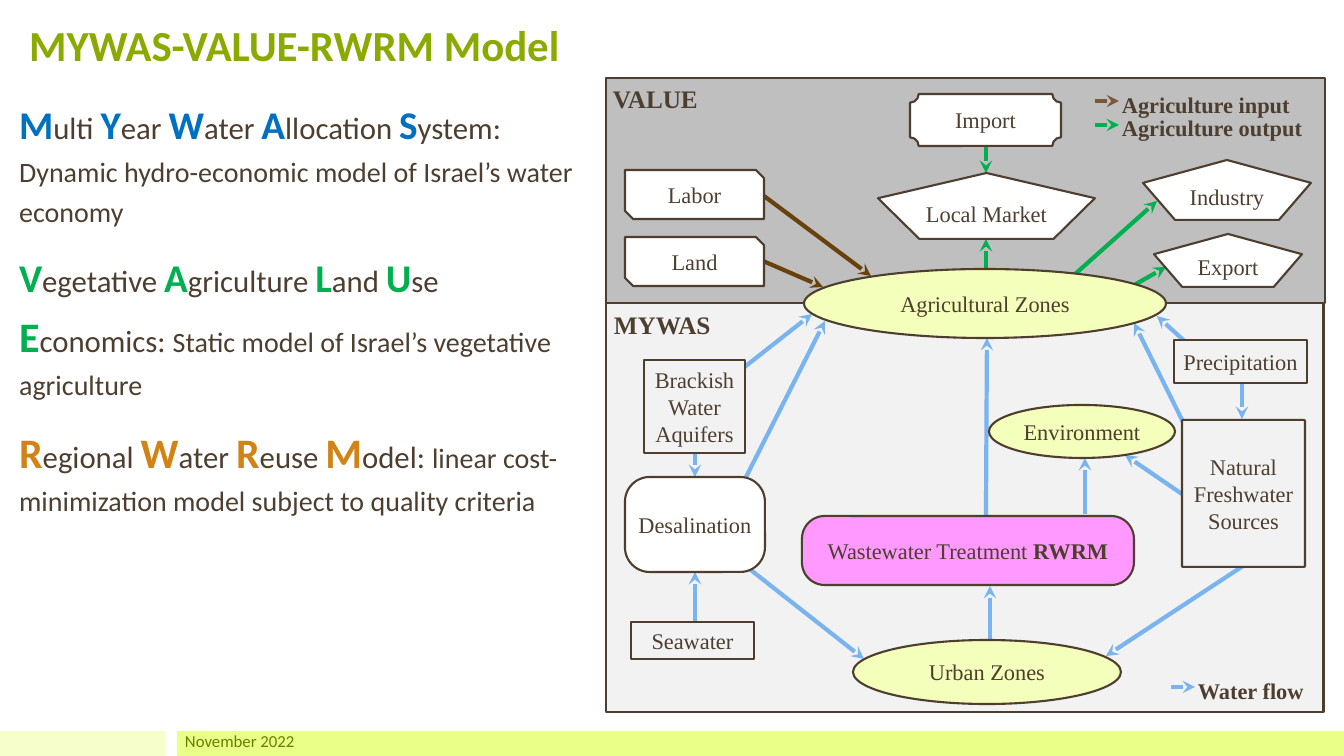
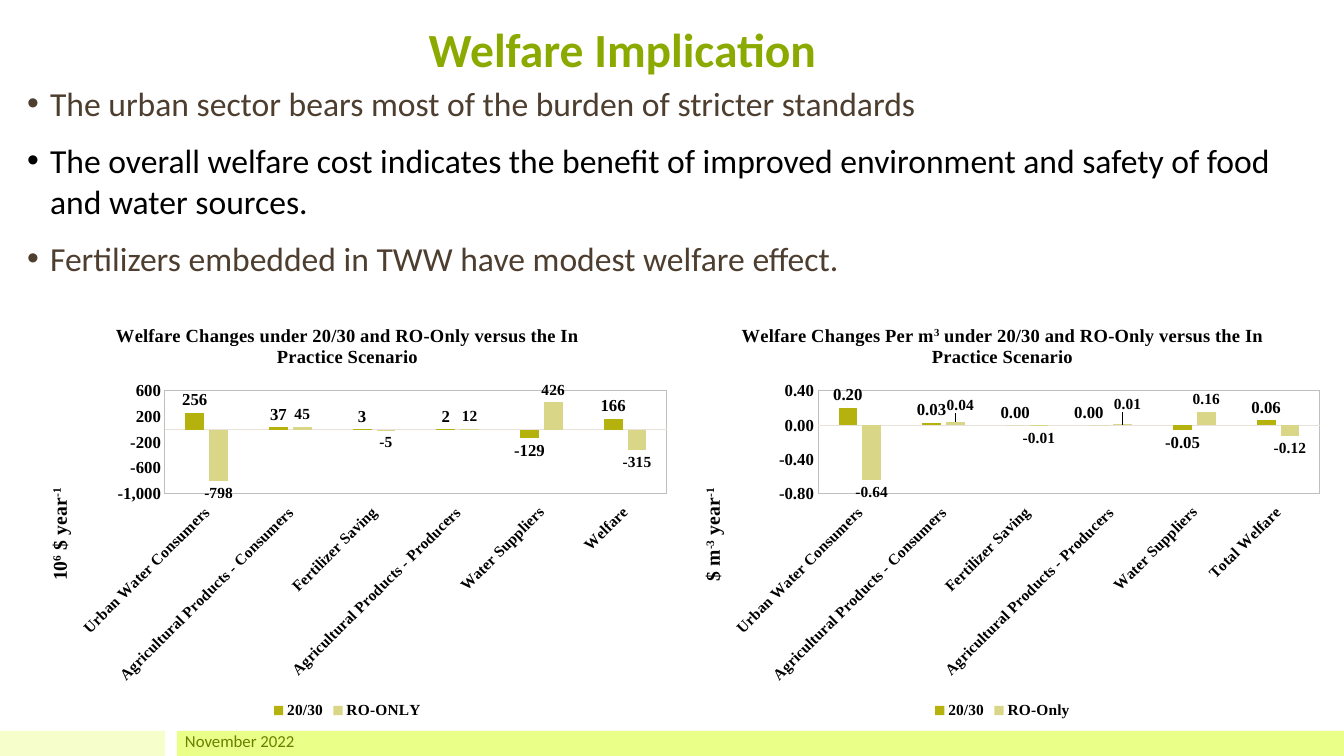
"""Build two slides: a water-economy model diagram and its welfare charts."""
from lxml import etree
from pptx import Presentation
from pptx.chart.data import CategoryChartData
from pptx.dml.color import RGBColor
from pptx.enum.chart import (XL_CHART_TYPE, XL_LABEL_POSITION, XL_LEGEND_POSITION,
                             XL_TICK_LABEL_POSITION, XL_TICK_MARK)
from pptx.enum.shapes import MSO_CONNECTOR, MSO_SHAPE
from pptx.enum.text import MSO_ANCHOR, MSO_AUTO_SIZE, PP_ALIGN
from pptx.oxml.ns import qn
from pptx.util import Pt

SCALE = 914400 / 100.8
LEFT, CENTER = PP_ALIGN.LEFT, PP_ALIGN.CENTER
TOP, MIDDLE = MSO_ANCHOR.TOP, MSO_ANCHOR.MIDDLE
RECT, ROUND, OVAL = MSO_SHAPE.RECTANGLE, MSO_SHAPE.ROUNDED_RECTANGLE, MSO_SHAPE.OVAL
PENTAGON, SNIP, PLAQUE = (MSO_SHAPE.REGULAR_PENTAGON, MSO_SHAPE.SNIP_2_DIAG_RECTANGLE,
                          MSO_SHAPE.PLAQUE)
SANS, SERIF = "Calibri", "Times New Roman"
COLORS = {
    "title": "8BAA00", "footer": "688000", "band_pale": "F6FFCC", "band": "E9FF88",
    "text": "4D3E2F", "black": "000000", "white": "FFFFFF", "panel": "F2F2F2",
    "panel_dark": "BFBFBF", "zone": "F3FFBB", "pink": "FF99FF", "water": "79B4F0",
    "input": "68410B", "input_key": "795837", "green": "00B050", "blue": "0070C0",
    "orange": "D18316", "axis": "E9E2DB", "olive": "B6B20D", "olive_pale": "DAD687",
}

BANDS = [((0, 731, 165, 25), "band_pale"), ((177, 731, 1167, 25), "band")]
FOOTER = ("November 2022", (175, 726, 131, 30))

ACRONYMS = [
    ("blue", [("Multi Year Water Allocation System:", 28)],
     "Dynamic hydro-economic model of Israel’s water economy"),
    ("green", [("Vegetative Agriculture Land Use", 28), ("Economics:", 30)],
     "Static model of Israel’s vegetative agriculture"),
    ("orange", [("Regional Water Reuse Model:", 30)],
     "linear cost-minimization model subject to quality criteria"),
]
PANELS = [((606, 303, 718, 409), "panel"), ((606, 78, 719, 225), "panel_dark")]
NODES = [
    ("Seawater", RECT, (631, 622, 123, 37), "panel", None),
    ("Brackish Water Aquifers", RECT, (644, 360, 101, 93), "panel", None),
    ("Natural Freshwater Sources", ROUND, (1182, 420, 123, 147), "panel", 0.01),
    ("Precipitation", RECT, (1174, 340, 133, 43), "panel", None),
    ("Labor", SNIP, (625, 170, 139, 49), "white", None),
    ("Land", SNIP, (625, 237, 139, 49), "white", None),
    ("Local Market", PENTAGON, (878, 173, 217, 66), "white", None),
    ("Export", PENTAGON, (1154, 234, 148, 53), "white", None),
    ("Industry", PENTAGON, (1143, 160, 168, 60), "white", None),
    ("Import", PLAQUE, (910, 94, 151, 52), "white", None),
    ("Agricultural Zones", OVAL, (804, 269, 362, 69), "zone", None),
    ("Urban Zones", OVAL, (853, 640, 268, 64), "zone", None),
    ("Environment", OVAL, (989, 405, 186, 53), "zone", None),
    ("Wastewater Treatment *RWRM", ROUND, (802, 516, 332, 69), "pink", 0.33),
    ("Desalination", ROUND, (625, 477, 140, 95), "white", 0.26),
]
ARROWS = {
    "water": [
        (695, 453, 695, 477), (733, 556, 864, 659), (742, 369, 812, 314),
        (1191, 438, 1134, 323), (990, 647, 990, 586), (1243, 566, 1106, 656),
        (695, 628, 695, 572), (1202, 357, 1157, 316), (1242, 368, 1242, 419),
        (986, 515, 987, 338), (742, 485, 825, 321), (1085, 514, 1085, 458),
        (1182, 494, 1125, 455), (1171, 687, 1195, 687),
    ],
    "input": [(763, 261, 823, 287), (764, 196, 871, 276)],
    "input_key": [(1095, 101, 1119, 101)],
    "green": [(1073, 276, 1157, 201), (1129, 288, 1166, 267), (986, 276, 986, 239),
              (986, 146, 986, 173), (1095, 125, 1119, 125)],
}
DIAGRAM_LABELS = [
    ("VALUE", (603, 78, 219, 40), 18), ("MYWAS", (604, 304, 276, 40), 18),
    ("Agriculture input", (1112, 86, 203, 37), 16),
    ("Agriculture output", (1112, 109, 203, 37), 16),
    ("Water flow", (1188, 672, 136, 37), 16),
]

FINDINGS = [
    ("The urban sector bears most of the burden of stricter standards", "text"),
    ("The overall welfare cost indicates the benefit of improved environment and "
     "safety of food and water sources.", "black"),
    ("Fertilizers embedded in TWW have modest welfare effect.", "text"),
]
GROUPS = ["Urban Water Consumers", "Agricultural Products - Consumers", "Fertilizer Saving",
          "Agricultural Products - Producers", "Water Suppliers"]
PLOT_BOX, AXIS_TITLE_AT = (148, 84, 502, 103), (27, 178)
CHARTS = [
    {"box": (17, 307, 661, 416), "total": "Welfare", "format": "#,##0",
     "title": "Welfare Changes under 20/30 and RO-Only versus the In Practice Scenario",
     "axis": "10^6^ $ year^-1^", "range": (-1000, 600, 400), "nudges": [],
     "series": [("20/30", [256, 37, 3, 2, -129, 166]),
                ("RO-ONLY", [-798, 45, -5, 12, 426, -315])]},
    {"box": (670, 307, 665, 416), "total": "Total Welfare", "format": "0.00",
     "title": "Welfare Changes Per m^3^ under 20/30 and RO-Only versus the In Practice Scenario",
     "axis": "$ m^-3^ year^-1^", "range": (-0.8, 0.4, 0.4),
     "nudges": [(0, 3, -10, 0), (1, 1, 5, -4), (1, 3, 5, -8)],
     "series": [("20/30", [0.2, 0.03, 0, 0, -0.05, 0.06]),
                ("RO-Only", [-0.64, 0.04, -0.01, 0.01, 0.16, -0.12])]},
]
SERIES_STYLES = [("olive", 12), ("olive_pale", 11)]


def emu(*lengths):
    return [round(length * SCALE) for length in lengths]


def rgb(name):
    return RGBColor.from_string(COLORS[name])


def style(font, size, color="text", name=SERIF, bold=False):
    values = {"size": Pt(size), "name": name, "bold": bold}
    for key, value in values.items():
        setattr(font, key, value)
    font.color.rgb = rgb(color)


def add_span(para, text, size, **values):
    span = para.add_run()
    span.text = text
    style(span.font, size, **values)
    return span


def set_frame(frame, anchor=TOP, inset=None):
    values = {"word_wrap": True, "auto_size": MSO_AUTO_SIZE.NONE, "vertical_anchor": anchor}
    if inset is not None:
        values.update(dict.fromkeys(
            ("margin_left", "margin_right", "margin_top", "margin_bottom"), inset))
    for key, value in values.items():
        setattr(frame, key, value)


def move(shape, box):
    for key, value in zip(("left", "top", "width", "height"), emu(*box)):
        setattr(shape, key, value)


def add_shape(page, kind, box, fill, line=None):
    shape = page.shapes.add_shape(kind, *emu(*box))
    shape.shadow.inherit = False
    shape.fill.solid()
    shape.fill.fore_color.rgb = rgb(fill)
    if line:
        shape.line.color.rgb = rgb("text")
        shape.line.width = Pt(line)
    else:
        shape.line.fill.background()
    return shape


def add_label(page, text, box, size, **values):
    label = page.shapes.add_textbox(*emu(*box))
    set_frame(label.text_frame)
    add_span(label.text_frame.paragraphs[0], text, size, **values)


def add_page(deck, title, title_box, size, align, body_box):
    page = deck.slides.add_slide(deck.slide_layouts[1])
    heading, body = page.placeholders
    move(heading, title_box)
    set_frame(heading.text_frame, MIDDLE)
    para = heading.text_frame.paragraphs[0]
    para.alignment = align
    add_span(para, title, size, color="title", name=SANS, bold=True)
    move(body, body_box)
    set_frame(body.text_frame)
    add_label(page, *FOOTER, 12, color="footer", name=SANS)
    return page, body.text_frame


def add_paras(frame, count, indent, before, after, spacing):
    paras = [frame.paragraphs[0]] + [frame.add_paragraph() for _ in range(count - 1)]
    for para in paras:
        para.space_before, para.space_after = Pt(before), Pt(after)
        para.line_spacing = spacing
        properties = para._p.get_or_add_pPr()
        width = emu(indent)[0]
        properties.set("marL", str(width))
        properties.set("indent", str(-width))
        if not indent:
            etree.SubElement(properties, qn("a:buNone"))
    return paras


def add_arrow(page, ends, color):
    arrow = page.shapes.add_connector(MSO_CONNECTOR.STRAIGHT, *emu(*ends))
    arrow.line.color.rgb = rgb(color)
    arrow.line.width = Pt(3)
    etree.SubElement(arrow.line._get_or_add_ln(), qn("a:tailEnd")).set("type", "stealth")
    etree.SubElement(arrow.element.spPr, qn("a:effectLst"))


def add_node(page, text, kind, box, fill, radius):
    node = add_shape(page, kind, box, fill, 1.5)
    if radius is not None:
        node.adjustments[0] = radius
    set_frame(node.text_frame, MIDDLE, 0)
    para = node.text_frame.paragraphs[0]
    para.alignment = CENTER
    plain, _, strong = text.partition("*")
    add_span(para, plain, 16)
    if strong:
        add_span(para, strong, 16, bold=True)


def write_chart_title(title, text, size):
    para = title.text_frame.paragraphs[0]
    for index, part in enumerate(filter(None, text.split("^"))):
        span = add_span(para, part, size, color="black", bold=True)
        if index % 2:
            span.font._element.set("baseline", "30000")


def set_layout(parent, index, values):
    for old in parent.findall(qn("c:layout")):
        parent.remove(old)
    layout = etree.Element(qn("c:layout"))
    manual = etree.SubElement(layout, qn("c:manualLayout"))
    for key, value in values.items():
        etree.SubElement(manual, qn("c:" + key)).set("val", str(value))
    parent.insert(index, layout)


def add_welfare_chart(page, content):
    data = CategoryChartData(number_format=content["format"])
    data.categories = GROUPS + [content["total"]]
    for name, numbers in content["series"]:
        data.add_series(name, numbers)
    chart = page.shapes.add_chart(
        XL_CHART_TYPE.COLUMN_CLUSTERED, *emu(*content["box"]), data).chart
    style(chart.font, 11, "black", bold=True)
    chart.has_title = chart.has_legend = True
    write_chart_title(chart.chart_title, content["title"], 13.2)
    chart.chart_title.include_in_layout = False
    chart.legend.position = XL_LEGEND_POSITION.BOTTOM
    chart.legend.include_in_layout = False
    style(chart.legend.font, 11, "black", bold=True)

    groups, amounts = chart.category_axis, chart.value_axis
    for axis, size in ((groups, 11), (amounts, 12)):
        axis.major_tick_mark = axis.minor_tick_mark = XL_TICK_MARK.NONE
        axis.has_major_gridlines = False
        style(axis.tick_labels.font, size, "black", bold=True)
    groups.tick_label_position = XL_TICK_LABEL_POSITION.LOW
    groups.format.line.color.rgb = rgb("axis")
    groups.format.line.width = Pt(0.75)
    amounts.format.line.fill.background()
    amounts.minimum_scale, amounts.maximum_scale, amounts.major_unit = content["range"]
    amounts.tick_labels.number_format = content["format"]
    amounts.tick_labels.number_format_is_linked = False
    write_chart_title(amounts.axis_title, content["axis"], 14)

    plot = chart.plots[0]
    plot.gap_width, plot.overlap, plot.vary_by_categories = 219, -27, False
    for series, (color, size) in zip(plot.series, SERIES_STYLES):
        series.invert_if_negative = False
        series.format.fill.solid()
        series.format.fill.fore_color.rgb = rgb(color)
        labels = series.data_labels
        labels.show_value = True
        labels.position = XL_LABEL_POSITION.OUTSIDE_END
        labels.number_format = content["format"]
        labels.number_format_is_linked = False
        style(labels.font, size, "black", bold=True)

    root = chart.element
    width, height = content["box"][2:]
    sizes = (width, height, width, height)
    edges = {"xMode": "edge", "yMode": "edge"}
    area = root.xpath("c:chart/c:plotArea")[0]
    fractions = [round(part / whole, 4) for part, whole in zip(PLOT_BOX, sizes)]
    set_layout(area, 0, {"layoutTarget": "inner", **edges, **dict(zip("xywh", fractions))})
    border = etree.SubElement(etree.SubElement(area, qn("c:spPr")), qn("a:ln"))
    fill = etree.SubElement(border, qn("a:solidFill"))
    etree.SubElement(fill, qn("a:srgbClr")).set("val", COLORS["panel_dark"])
    root.xpath("//c:catAx/c:txPr/a:bodyPr")[0].set("rot", "-2700000")
    fractions = [round(part / whole, 4) for part, whole in zip(AXIS_TITLE_AT, sizes)]
    set_layout(root.xpath("//c:valAx/c:title")[0], 1, {**edges, **dict(zip("xy", fractions))})
    for row, point, right, down in content["nudges"]:
        label = plot.series[row].points[point].data_label
        label.position = XL_LABEL_POSITION.OUTSIDE_END
        style(label.font, SERIES_STYLES[row][1], "black", bold=True)
        element = root.xpath(f"//c:ser[{row + 1}]//c:dLbl[c:idx/@val='{point}']")[0]
        set_layout(element, 1, {"x": round(right / width, 4), "y": round(down / height, 4)})


def build_model_page(deck):
    page, body = add_page(deck, "MYWAS-VALUE-RWRM Model", (19, 9, 607, 71), 30.6, LEFT,
                          (9, 86, 580, 559))
    paras = add_paras(body, len(ACRONYMS), 0, 11, 0, 1.2)
    for para, (color, phrases, meaning) in zip(paras, ACRONYMS):
        for phrase, size in phrases:
            for word in phrase.split():
                add_span(para, word[0], size, color=color, name=SANS, bold=True)
                add_span(para, word[1:] + " ", 22, name=SANS)
        add_span(para, meaning, 20, name=SANS)
    for box, fill in PANELS:
        add_shape(page, RECT, box, fill, 2)
    for color, routes in ARROWS.items():
        for ends in routes:
            add_arrow(page, ends, color)
    for node in NODES:
        add_node(page, *node)
    for label in DIAGRAM_LABELS:
        add_label(page, *label, bold=True)
    return page


def build_welfare_page(deck):
    page, body = add_page(deck, "Welfare Implication", (57, 9, 1131, 78), 34, CENTER,
                          (17, 78, 1308, 212))
    paras = add_paras(body, len(FINDINGS), 23, 0, 12, 1.0)
    for para, (text, color) in zip(paras, FINDINGS):
        add_span(para, text, 24, color=color, name=SANS)
    for content in CHARTS:
        add_welfare_chart(page, content)


def main():
    deck = Presentation()
    deck.slide_width, deck.slide_height = emu(1344, 756)
    page = build_model_page(deck)
    for box, fill in BANDS:
        deck.slide_master.shapes.element.append(add_shape(page, RECT, box, fill).element)
    build_welfare_page(deck)
    deck.save("out.pptx")


if __name__ == "__main__":
    main()
